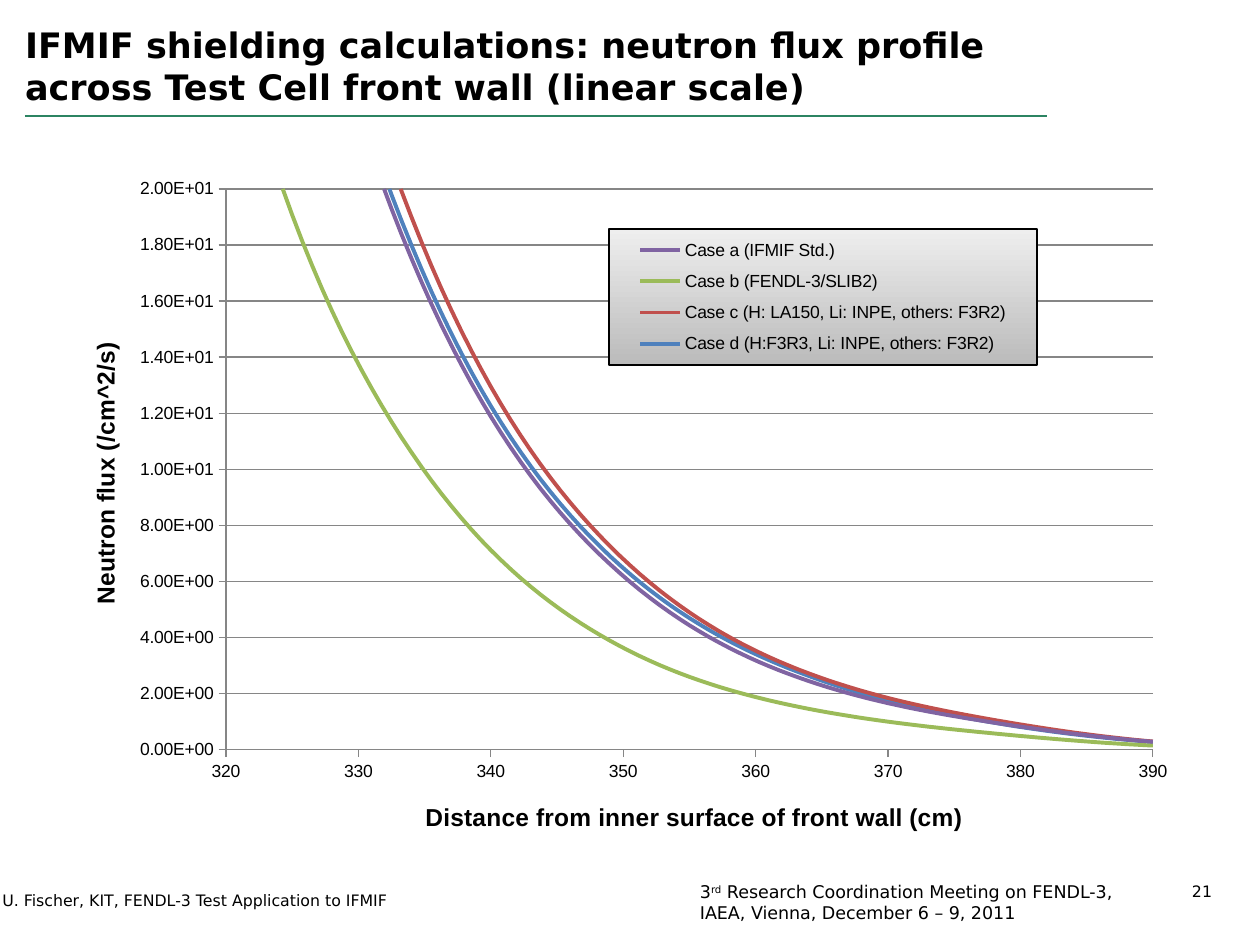
from lxml import etree
from pptx import Presentation
from pptx.chart.data import XyChartData
from pptx.dml.color import RGBColor
from pptx.enum.chart import XL_CHART_TYPE, XL_LEGEND_POSITION, XL_TICK_MARK
from pptx.enum.shapes import MSO_CONNECTOR
from pptx.enum.text import MSO_ANCHOR, MSO_AUTO_SIZE, PP_ALIGN
from pptx.oxml import parse_xml
from pptx.oxml.ns import nsdecls, qn
from pptx.util import Emu, Pt

SMOOTH_SCATTER = XL_CHART_TYPE.XY_SCATTER_SMOOTH_NO_MARKERS
LEGEND_RIGHT = XL_LEGEND_POSITION.RIGHT
TICK_OUTSIDE, TICK_NONE = XL_TICK_MARK.OUTSIDE, XL_TICK_MARK.NONE
STRAIGHT = MSO_CONNECTOR.STRAIGHT

PIXELS_PER_INCH = 126
CHART_LEFT, CHART_TOP, CHART_WIDTH, CHART_HEIGHT = 54, 165, 1152, 674
TEXT_FONT, CHART_FONT = "DejaVu Sans", "Arial"
COLORS = {
    "text": "000000", "rule": "2C8462", "axis": "868686",
    "legend_top": "EEEEEE", "legend_bottom": "BBBBBB",
    "a": "8064A2", "b": "9BBB59", "c": "C0504D", "d": "4F81BD",
}

# Distances in steps of 15 cm; the first two and the last have no flux
DISTANCES = [2.5 + 15 * index for index in range(45)] + [850, None]
CASES = [
    ("a", "Case a (IFMIF Std.)", [
        78343200000, 17518700000, 4564830000, 1275590000, 365439000, 108837000,
        33646100, 10722400, 3513520, 1190890, 413094, 146112, 52531.4, 19099.5,
        7011.2, 2597.9, 967.8, 361.9, 135.8, 51.1, 19.3, 7.3, 2.7, 1, 0.2]
        + [0.1] * 8 + [0] * 11),
    ("b", "Case b (FENDL-3/SLIB2)", [
        79420100000, 17580600000, 4471230000, 1226410000, 342523000, 98789300,
        29425700, 9038530, 2858310, 936896, 313830, 107524, 37649.4, 13371.7,
        4807.8, 1742.6, 636.4, 232.7, 85.6, 31.6, 11.7, 4.3, 1.6, 0.6]
        + [0.1] * 4 + [0] * 16),
    ("c", "Case c (H: LA150, Li: INPE, others: F3R2)", [
        79445000000, 17644400000, 4584300000, 1269800000, 361287000, 106090000,
        32350900, 10259700, 3352600, 1132540, 393936, 140381, 50901.3, 18710.8,
        6957.1, 2616.5, 988.8, 375.1, 142.7, 54.5, 20.9, 8, 3, 1.1, 0.2]
        + [0.1] * 11 + [0] * 8),
    ("d", "Case d (H:F3R3, Li: INPE, others: F3R2)", [
        79723600000, 17707800000, 4563430000, 1271750000, 359629000, 105281000,
        31925800, 10058100, 3289860, 1104380, 379655, 134321, 48485.6, 17858,
        6645.2, 2498.6, 939.4, 355.9, 135.3, 51.7, 19.8, 7.6, 2.9, 1, 0.2]
        + [0.1] * 10 + [0] * 9),
]


def px(pixels):
    return Emu(round(pixels * 914400 / PIXELS_PER_INCH))


def color(name):
    return RGBColor.from_string(COLORS[name])


def style_font(font, size, name=TEXT_FONT, bold=False):
    font.name, font.size, font.bold = name, Pt(size), bold
    font.color.rgb = color("text")


def add_run(paragraph, text, size, bold=False, superscript=False):
    run = paragraph.add_run()
    run.text = text
    style_font(run.font, size, bold=bold)
    if superscript:
        run.font._element.set("baseline", "30000")


def clear_margins(frame):
    frame.margin_left = frame.margin_top = 0
    frame.margin_right = frame.margin_bottom = 0


def add_title(slide, text, left, top, width, height):
    title = slide.shapes.title
    title.left, title.top = px(left), px(top)
    title.width, title.height = px(width), px(height)
    frame = title.text_frame
    clear_margins(frame)
    frame.word_wrap = True
    frame.auto_size = MSO_AUTO_SIZE.NONE
    frame.vertical_anchor = MSO_ANCHOR.BOTTOM
    frame.paragraphs[0].alignment = PP_ALIGN.LEFT
    add_run(frame.paragraphs[0], text, 20, bold=True)


def add_text(slide, runs, size, left, top, width, height, margins=False):
    box = slide.shapes.add_textbox(px(left), px(top), px(width), px(height))
    frame = box.text_frame
    frame.word_wrap = True
    if not margins:
        clear_margins(frame)
    for text, superscript in runs:
        add_run(frame.paragraphs[0], text, size, superscript=superscript)


def add_rule(slide, left, right, top):
    rule = slide.shapes.add_connector(STRAIGHT, px(left), px(top), px(right), px(top))
    rule.line.color.rgb = color("rule")
    rule.line.width = Pt(0.75)
    etree.SubElement(rule._element.spPr, qn("a:effectLst"))


def place(element, index, left, top, width=None, height=None, inner=False):
    """Give a chart part a fixed place, in slide pixels."""
    for layout in element.findall(qn("c:layout")):
        element.remove(layout)
    parts = [("x", (left - CHART_LEFT) / CHART_WIDTH), ("y", (top - CHART_TOP) / CHART_HEIGHT)]
    if width:
        parts += [("w", width / CHART_WIDTH), ("h", height / CHART_HEIGHT)]
    values = "".join(f'<c:{tag} val="{value}"/>' for tag, value in parts)
    target = '<c:layoutTarget val="inner"/>' if inner else ""
    element.insert(index, parse_xml(
        f'<c:layout {nsdecls("c")}><c:manualLayout>{target}<c:xMode val="edge"/>'
        f'<c:yMode val="edge"/>{values}</c:manualLayout></c:layout>'))


def style_axis(axis, title, title_place, scale, number_format, gridlines):
    axis.minimum_scale, axis.maximum_scale, axis.major_unit = scale
    axis.major_tick_mark, axis.minor_tick_mark = TICK_OUTSIDE, TICK_NONE
    axis.format.line.color.rgb = color("axis")
    axis.has_major_gridlines = gridlines
    if gridlines:
        axis.major_gridlines.format.line.color.rgb = color("axis")
    axis.tick_labels.number_format = number_format
    axis.tick_labels.number_format_is_linked = False
    style_font(axis.tick_labels.font, 10, CHART_FONT)
    run = axis.axis_title.text_frame.paragraphs[0].add_run()
    run.text = title
    style_font(run.font, 14, CHART_FONT, bold=True)
    place(axis.axis_title._element, 1, *title_place)


def style_legend(chart):
    chart.has_legend = True
    legend = chart.legend
    legend.position = LEGEND_RIGHT
    legend.include_in_layout = False
    style_font(legend.font, 10, CHART_FONT)
    place(legend._element, 1, 609, 229, 428, 136)
    legend._element.find(qn("c:overlay")).addnext(parse_xml(
        f'<c:spPr {nsdecls("c", "a")}><a:gradFill><a:gsLst>'
        f'<a:gs pos="0"><a:srgbClr val="{COLORS["legend_top"]}"/></a:gs>'
        f'<a:gs pos="100000"><a:srgbClr val="{COLORS["legend_bottom"]}"/></a:gs>'
        '</a:gsLst><a:lin ang="5400000" scaled="0"/></a:gradFill>'
        f'<a:ln w="12700"><a:solidFill><a:srgbClr val="{COLORS["text"]}"/>'
        '</a:solidFill></a:ln></c:spPr>'))


def add_flux_chart(slide):
    data = XyChartData(number_format="0.00E+00")
    for _, name, fluxes in CASES:
        series = data.add_series(name)
        for distance, flux in zip(DISTANCES, [None, None, *fluxes, None]):
            series.add_data_point(distance, flux)
    chart = slide.shapes.add_chart(
        SMOOTH_SCATTER, px(CHART_LEFT), px(CHART_TOP), px(CHART_WIDTH),
        px(CHART_HEIGHT), data).chart
    chart.has_title = False
    style_font(chart.font, 10, CHART_FONT)
    chart.plots[0].vary_by_categories = False
    for (case, _, _), series in zip(CASES, chart.plots[0].series):
        series._element.get_or_add_smooth().val = True
        series.format.line.color.rgb = color(case)
        series.format.line.width = Pt(2.25)
    style_axis(chart.category_axis, "Distance from inner surface of front wall (cm)",
               (421, 797), (320, 390, 10), "General", False)
    style_axis(chart.value_axis, "Neutron flux (/cm^2/s)",
               (85, 338), (0, 20, 2), "0.00E+00", True)
    style_legend(chart)
    place(chart._chartSpace.chart.plotArea, 0, 226, 189, 927, 561, inner=True)


def main():
    presentation = Presentation()
    presentation.slide_width, presentation.slide_height = px(1260), px(945)
    slide = presentation.slides.add_slide(presentation.slide_layouts[5])

    # Heading
    add_title(slide, "IFMIF shielding calculations: neutron flux profile across "
              "Test Cell front wall (linear scale)", 25, 30, 1062, 78)
    add_rule(slide, 25, 1047, 116)

    add_flux_chart(slide)

    # Footer
    add_text(slide, [("U. Fischer, KIT, FENDL-3 Test Application to IFMIF", False)],
             9, -10, 885, 630, 32, margins=True)
    add_text(slide, [("3", False), ("rd", True),
                     (" Research Coordination Meeting on FENDL-3, IAEA, Vienna, "
                      "December 6 – 9, 2011", False)], 10, 700, 881, 431, 49)
    add_text(slide, [("21", False)], 9, 1192, 882, 45, 30)

    presentation.save("out.pptx")


if __name__ == "__main__":
    main()
